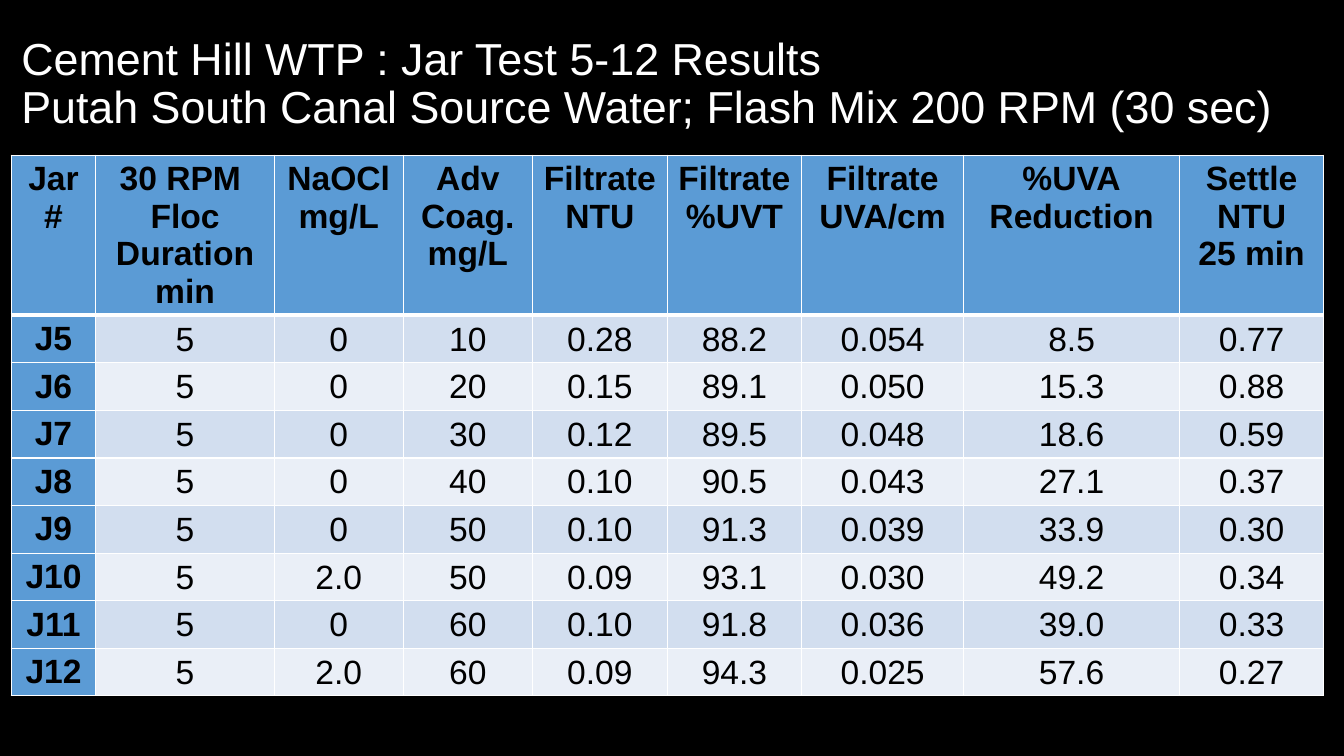
from lxml.etree import SubElement
from pptx import Presentation
from pptx.dml.color import RGBColor
from pptx.enum.text import MSO_ANCHOR, MSO_AUTO_SIZE, PP_ALIGN
from pptx.oxml.ns import qn
from pptx.util import Pt

BLACK, WHITE = "000000", "FFFFFF"
HEADER_BLUE = "5B9BD5"
BANDS = ("D2DEEF", "EAEFF7")

TITLE = ("Cement Hill WTP : Jar Test 5-12 Results\v"
         "Putah South Canal Source Water; Flash Mix 200 RPM (30 sec)")
HEADINGS = ["Jar\n#", "30 RPM \nFloc\nDuration\nmin", "NaOCl\nmg/L",
            "Adv\nCoag.\nmg/L", "Filtrate\nNTU", "Filtrate\n%UVT",
            "Filtrate\nUVA/cm", "%UVA\nReduction", "Settle\nNTU\n25 min"]
JAR_RESULTS = [
    ["J5", "5", "0", "10", "0.28", "88.2", "0.054", "8.5", "0.77"],
    ["J6", "5", "0", "20", "0.15", "89.1", "0.050", "15.3", "0.88"],
    ["J7", "5", "0", "30", "0.12", "89.5", "0.048", "18.6", "0.59"],
    ["J8", "5", "0", "40", "0.10", "90.5", "0.043", "27.1", "0.37"],
    ["J9", "5", "0", "50", "0.10", "91.3", "0.039", "33.9", "0.30"],
    ["J10", "5", "2.0", "50", "0.09", "93.1", "0.030", "49.2", "0.34"],
    ["J11", "5", "0", "60", "0.10", "91.8", "0.036", "39.0", "0.33"],
    ["J12", "5", "2.0", "60", "0.09", "94.3", "0.025", "57.6", "0.27"],
]
COLUMN_WIDTHS = [60.5, 127.4, 92.2, 92.2, 96.5, 95.8, 115.9, 154.1, 103]
HEADER_HEIGHT, ROW_HEIGHT = 75, 31.7

LABEL_FORMAT = {"margin_left": Pt(7.2), "margin_right": Pt(7.2),
                "margin_top": Pt(3.6), "margin_bottom": Pt(3.6),
                "vertical_anchor": MSO_ANCHOR.TOP}
VALUE_FORMAT = {"margin_left": Pt(0.72), "margin_right": Pt(0.72),
                "margin_top": Pt(0.72), "margin_bottom": 0,
                "vertical_anchor": MSO_ANCHOR.MIDDLE}


def rgb(code):
    return RGBColor.from_string(code)


def apply(target, settings):
    for name, value in settings.items():
        setattr(target, name, value)


class ResultsSlide:
    """The current slide with its font and text sizes."""

    font_name, title_size, table_size = "Arial", 32, 24

    def __init__(self, deck):
        self.slide = deck.slides.add_slide(deck.slide_layouts[5])
        fill = self.slide.background.fill
        fill.solid()
        fill.fore_color.rgb = rgb(BLACK)

    def style(self, paragraph, size, color, bold, align):
        paragraph.alignment = align
        for run in paragraph.runs:
            apply(run.font, {"name": self.font_name, "size": Pt(size), "bold": bold})
            run.font.color.rgb = rgb(color)

    def title(self, text, left, top, width, height):
        heading = self.slide.shapes.title
        apply(heading, {"left": Pt(left), "top": Pt(top),
                        "width": Pt(width), "height": Pt(height)})
        frame = heading.text_frame
        apply(frame, {"word_wrap": True, "auto_size": MSO_AUTO_SIZE.NONE,
                      "vertical_anchor": MSO_ANCHOR.MIDDLE})
        paragraph = frame.paragraphs[0]
        paragraph.text = text
        apply(paragraph, {"line_spacing": 0.9, "space_before": Pt(0)})
        self.style(paragraph, self.title_size, WHITE, False, PP_ALIGN.LEFT)

    def borders(self, cell, widths):
        """Draw white edges; widths maps L, R, T and B to points."""
        properties = cell._tc.get_or_add_tcPr()
        for index, (side, width) in enumerate(widths.items()):
            edge = properties.makeelement(qn(f"a:ln{side}"), {"w": str(Pt(width))})
            properties.insert(index, edge)
            solid = SubElement(edge, qn("a:solidFill"))
            SubElement(solid, qn("a:srgbClr"), val=WHITE)

    def cell(self, cell, text, fill, is_label, edges):
        cell.text = text
        apply(cell, LABEL_FORMAT if is_label else VALUE_FORMAT)
        cell.fill.solid()
        cell.fill.fore_color.rgb = rgb(fill)
        for paragraph in cell.text_frame.paragraphs:
            self.style(paragraph, self.table_size, BLACK, is_label, PP_ALIGN.CENTER)
        self.borders(cell, edges)

    def table(self, rows, left, top, height):
        frame = self.slide.shapes.add_table(
            len(rows), len(COLUMN_WIDTHS), Pt(left), Pt(top),
            Pt(sum(COLUMN_WIDTHS)), Pt(height))
        table = frame.table
        apply(table, {"first_row": True, "first_col": True, "horz_banding": False})
        for column, width in zip(table.columns, COLUMN_WIDTHS):
            column.width = Pt(width)
        for r, values in enumerate(rows):
            table.rows[r].height = Pt(ROW_HEIGHT if r else HEADER_HEIGHT)
            edges = {"L": 1, "R": 1, "T": 3 if r == 1 else 1, "B": 1 if r else 3}
            for c, value in enumerate(values):
                is_label = r == 0 or c == 0
                fill = HEADER_BLUE if is_label else BANDS[(r - 1) % 2]
                self.cell(table.cell(r, c), value, fill, is_label, edges)
        frame.height = Pt(height)


def main():
    deck = Presentation()
    apply(deck, {"slide_width": Pt(960), "slide_height": Pt(540)})
    results = ResultsSlide(deck)
    results.title(TITLE, 8, 8.6, 943, 104.4)
    results.table([HEADINGS] + JAR_RESULTS, 8, 110.9, 410.4)
    deck.save("out.pptx")


if __name__ == "__main__":
    main()
